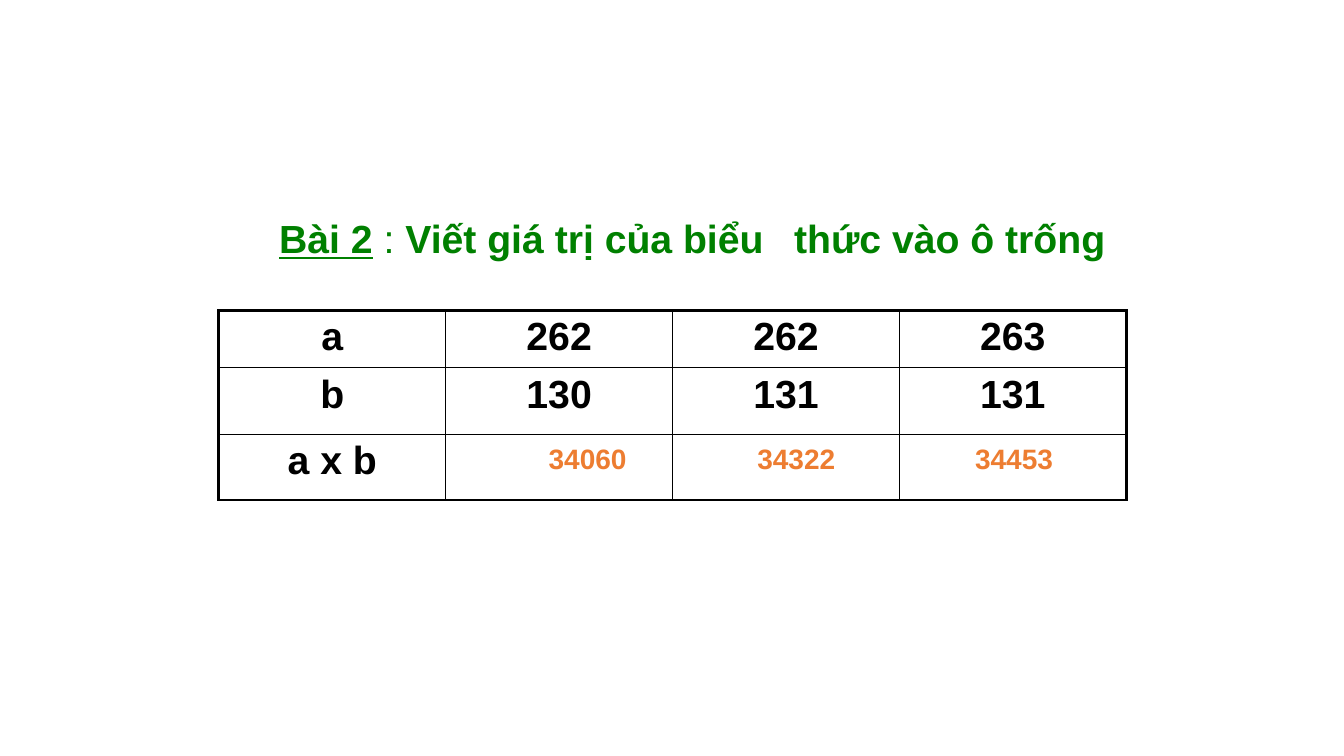
from lxml.etree import SubElement
from pptx import Presentation
from pptx.dml.color import RGBColor
from pptx.enum.text import PP_ALIGN
from pptx.oxml.ns import qn
from pptx.util import Inches, Pt

GREEN = RGBColor(0x00, 0x80, 0x00)
ORANGE = RGBColor(0xED, 0x7D, 0x31)
BLACK = RGBColor(0x00, 0x00, 0x00)
THIN, THICK = Pt(1), Pt(2.25)

HEADING = [
    ("Bài 2", {"bold": True, "underline": True}),
    (" : ", {"bold": False}),
    ("Viết giá trị của biểu \t thức vào ô trống", {"bold": True}),
]
ROWS = [
    ["a", "262", "262", "263"],
    ["b", "130", "131", "131"],
    ["a x b", "", "", ""],
]
ROW_HEIGHTS = [0.57, 0.66, 0.65]
# Text, left offset from the table and width, in columns
ANSWERS = [("34060", 1.41, 0.74), ("34322", 2.33, 1.08), ("34453", 3.29, 0.81)]


def add_run(p, text, size, color, **formats):
    r = p.add_run()
    r.text = text
    for name, value in {"name": "Arial", "size": Pt(size), **formats}.items():
        setattr(r.font, name, value)
    r.font.color.rgb = color


def add_text(s, box, runs, size, color):
    """Place one line of formatted runs in a box given in inches."""
    tf = s.shapes.add_textbox(*map(Inches, box)).text_frame
    tf.word_wrap = True
    for text, formats in runs:
        add_run(tf.paragraphs[0], text, size, color, **formats)


def set_borders(cell, widths):
    """Draw the left, right, top and bottom borders of a cell."""
    tcPr = cell._tc.get_or_add_tcPr()
    for side, width in zip("LRTB", widths):
        ln = SubElement(tcPr, qn(f"a:ln{side}"), w=str(width))
        fill = SubElement(ln, qn("a:solidFill"))
        SubElement(fill, qn("a:srgbClr"), val=str(BLACK))


def add_value_table(s, left, top, width):
    n_rows, n_cols = len(ROWS), len(ROWS[0])
    frame = s.shapes.add_table(n_rows, n_cols, Inches(left), Inches(top),
                               Inches(width), Inches(sum(ROW_HEIGHTS)))
    table = frame.table
    table.first_row = table.horz_banding = False
    for row, height in zip(table.rows, ROW_HEIGHTS):
        row.height = Inches(height)
    for i, values in enumerate(ROWS):
        for j, value in enumerate(values):
            cell = table.cell(i, j)
            outer = (j == 0, j == n_cols - 1, i == 0, i == n_rows - 1)
            set_borders(cell, [THICK if edge else THIN for edge in outer])
            cell.fill.background()
            if value:
                p = cell.text_frame.paragraphs[0]
                p.alignment = PP_ALIGN.CENTER
                add_run(p, value, 28, BLACK, bold=True)


def add_answers(s, left, top, width):
    """Write the products over the last row of the table."""
    col = width / len(ROWS[0])
    y = top + sum(ROW_HEIGHTS[:-1]) + 0.02
    for text, offset, span in ANSWERS:
        add_text(s, (left + offset * col, y, span * col, 0.43),
                 [(text, {"bold": True})], 20, ORANGE)


def main():
    prs = Presentation()
    prs.slide_width, prs.slide_height = Inches(13.33), Inches(7.5)
    s = prs.slides.add_slide(prs.slide_layouts[6])
    table_box = (2.17, 3.08, 9)
    add_text(s, (2.67, 2.08, 8.42, 1.03), HEADING, 28, GREEN)
    add_value_table(s, *table_box)
    add_answers(s, *table_box)
    prs.save("out.pptx")


if __name__ == "__main__":
    main()
